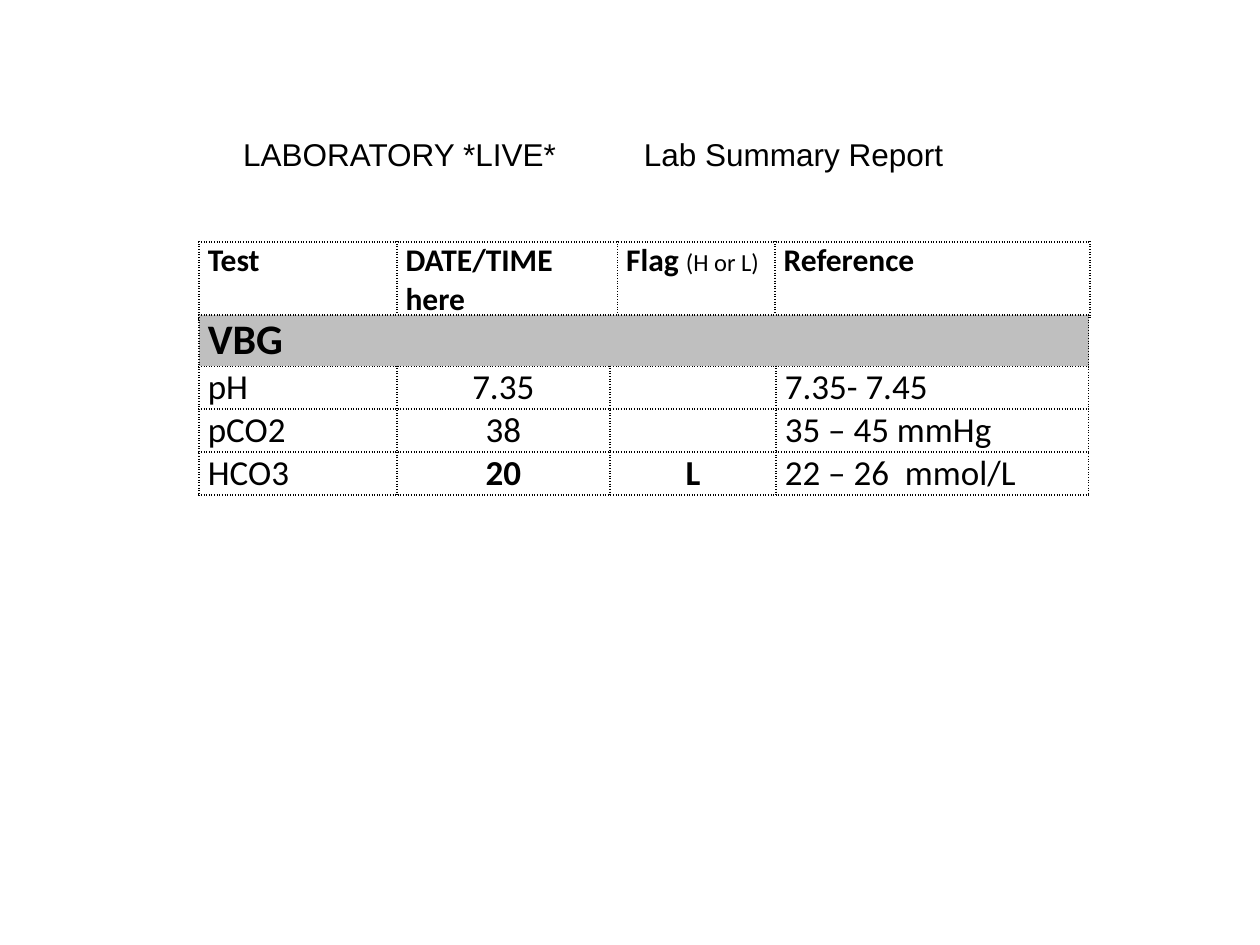
from lxml.etree import SubElement
from pptx import Presentation
from pptx.dml.color import RGBColor
from pptx.enum.text import MSO_ANCHOR, PP_ALIGN
from pptx.oxml.ns import qn
from pptx.util import Inches, Pt

COLORS = {"ink": "000000", "paper": "FFFFFF", "section": "BFBFBF"}
TITLE = "LABORATORY *LIVE*\tLab Summary Report"
TITLE_TAB = 3.18

# Each cell is a list of runs: (text, size, bold)
HEADINGS = [[
    [("Test", 18, True)],
    [("DATE/TIME here", 18, True)],
    [("Flag ", 18, True), ("(H or L)", 14, False)],
    [("Reference", 18, True)],
]]
SECTION = [[("VBG", 24, True)], [], [], []]
# Test, value, flag, reference
RESULTS = [
    ("pH", "7.35", "", "7.35- 7.45"),
    ("pCO2", "38", "", "35 – 45 mmHg"),
    ("HCO3", "20", "L", "22 – 26  mmol/L"),
]
TABLE_LEFT = 1.58
HEADING_GRID = {"top": 1.92, "columns": [1.57, 1.75, 1.25, 2.5], "rows": [0.59]}
RESULT_GRID = {"top": 2.5, "columns": [1.57, 1.69, 1.32, 2.48],
               "rows": [0.4] + [0.34] * len(RESULTS)}


def color(name):
    return RGBColor.from_string(COLORS[name])


def add_dotted_borders(cell):
    properties = cell._tc.get_or_add_tcPr()
    for position, side in enumerate(("lnL", "lnR", "lnT", "lnB")):
        line = SubElement(properties, qn("a:" + side), w=str(Pt(1)))
        fill = SubElement(line, qn("a:solidFill"))
        SubElement(fill, qn("a:srgbClr"), val=COLORS["ink"])
        SubElement(line, qn("a:prstDash"), val="sysDot")
        properties.insert(position, line)


def fill_cell(cell, runs, centred):
    cell.margin_left = cell.margin_right = Inches(0.07)
    cell.margin_top = cell.margin_bottom = 0
    paragraph = cell.text_frame.paragraphs[0]
    if centred:
        paragraph.alignment = PP_ALIGN.CENTER
    for text, size, bold in runs:
        run = paragraph.add_run()
        run.text = text
        run.font.name = "Calibri"
        run.font.size = Pt(size)
        run.font.bold = bold
        run.font.color.rgb = color("ink")


def add_grid(slide, grid, rows, centred=lambda row, column: False):
    widths, heights = grid["columns"], grid["rows"]
    frame = slide.shapes.add_table(
        len(heights), len(widths), Inches(TABLE_LEFT), Inches(grid["top"]),
        Inches(sum(widths)), Inches(sum(heights)))
    table = frame.table
    table.first_row = table.horz_banding = False
    for column, width in zip(table.columns, widths):
        column.width = Inches(width)
    for row_index, (height, cells) in enumerate(zip(heights, rows)):
        table.rows[row_index].height = Inches(height)
        for column_index, runs in enumerate(cells):
            cell = table.cell(row_index, column_index)
            fill_cell(cell, runs, centred(row_index, column_index))
            cell.fill.solid()
            cell.fill.fore_color.rgb = color("paper")
            add_dotted_borders(cell)
    return table


def add_title(slide):
    title = slide.shapes.title
    title.left, title.top = Inches(1.83), Inches(1.02)
    title.width, title.height = Inches(6.03), Inches(0.71)
    frame = title.text_frame
    frame.text = TITLE
    frame.vertical_anchor = MSO_ANCHOR.TOP
    paragraph = frame.paragraphs[0]
    paragraph.alignment = PP_ALIGN.LEFT
    tabs = SubElement(paragraph._p.get_or_add_pPr(), qn("a:tabLst"))
    SubElement(tabs, qn("a:tab"), pos=str(Inches(TITLE_TAB)), algn="l")
    for run in paragraph.runs:
        run.font.name = "Arial"
        run.font.size = Pt(18)
        run.font.color.rgb = color("ink")


def main():
    presentation = Presentation()
    presentation.slide_width, presentation.slide_height = Inches(10), Inches(7.5)
    slide = presentation.slides.add_slide(presentation.slide_layouts[5])
    add_title(slide)

    # Column headings
    add_grid(slide, HEADING_GRID, HEADINGS)

    # Results: abnormal values, those with a flag, are bold
    rows = [SECTION]
    for result in RESULTS:
        flagged = bool(result[2])
        rows.append([[(text, 20, flagged and column in (1, 2))] if text else []
                     for column, text in enumerate(result)])
    table = add_grid(slide, RESULT_GRID, rows,
                     lambda row, column: row > 0 and column in (1, 2))

    # Section band across all columns
    band = table.cell(0, 0)
    band.merge(table.cell(0, len(SECTION) - 1))
    band.fill.fore_color.rgb = color("section")

    presentation.save("out.pptx")


if __name__ == "__main__":
    main()
